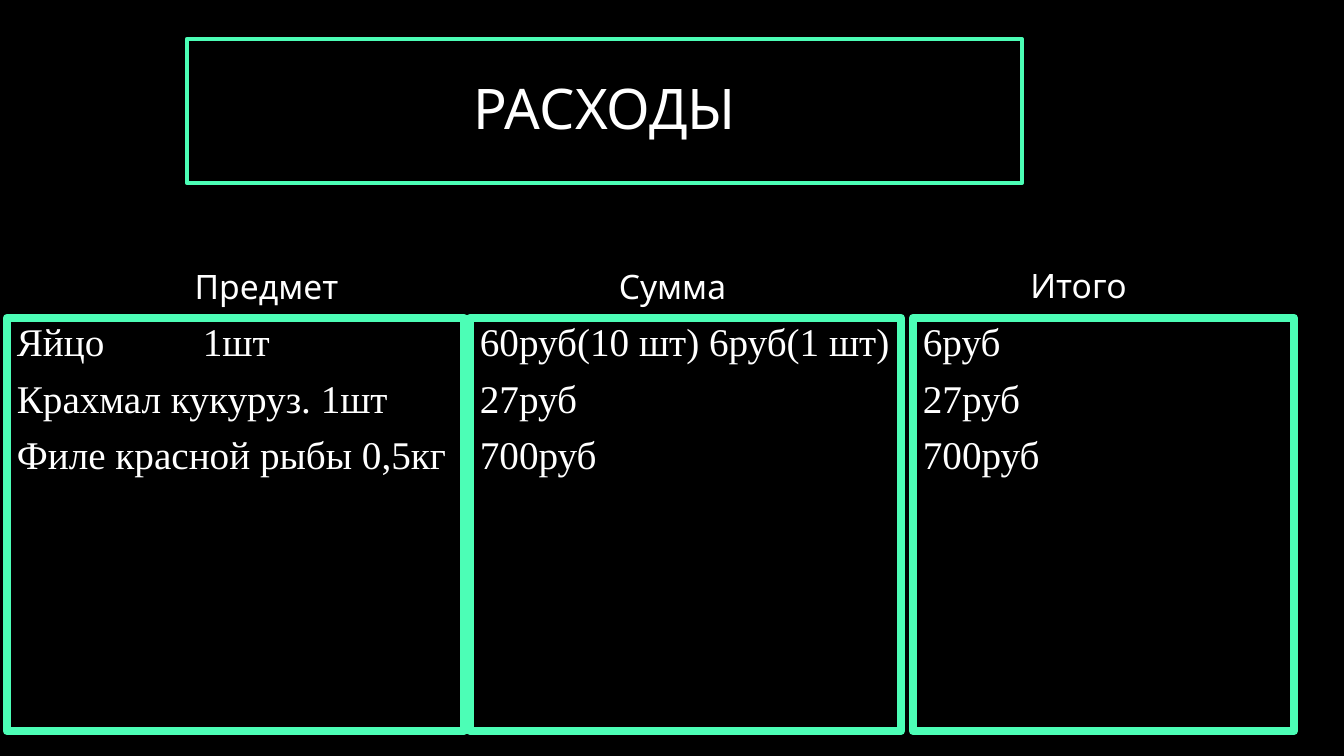
from lxml.etree import SubElement
from pptx import Presentation
from pptx.dml.color import RGBColor
from pptx.enum.shapes import MSO_SHAPE
from pptx.enum.text import MSO_ANCHOR, PP_ALIGN
from pptx.oxml.ns import qn
from pptx.util import Emu, Pt

BLACK, WHITE, MINT = "000000", "FFFFFF", "4CFEB6"
HEADING_FONT, LIST_FONT = "Quicksand", "Times New Roman"
QUANTITY_TAB = 186
LIST_TOP, LIST_HEIGHT = 318, 413
HEADING_WIDTH, HEADING_HEIGHT = 381, 69

# heading, heading left and top, list left and width, entries
COLUMNS = [
    ("Предмет", 76, 243, 7, 457,
     ["Яйцо\t1шт", "Крахмал кукуруз. 1шт", "Филе красной рыбы 0,5кг"]),
    ("Сумма", 482, 243, 470, 431,
     ["60руб(10 шт) 6руб(1 шт)", "27руб", "700руб"]),
    ("Итого", 888, 242, 913, 381,
     ["6руб", "27руб", "700руб"]),
]


def px(length):
    return Emu(round(length * 914400 / 100.8))


def color(value):
    return RGBColor.from_string(value)


def add_frame(page, box, line_width):
    """Add an unfilled mint rectangle."""
    frame = page.shapes.add_shape(MSO_SHAPE.RECTANGLE, *map(px, box))
    frame.shadow.inherit = False
    frame.fill.background()
    frame.line.color.rgb = color(MINT)
    frame.line.width = Pt(line_width)
    return frame


def write_lines(shape, lines, font, size, align, anchor):
    text = shape.text_frame
    text.word_wrap = True
    text.vertical_anchor = anchor
    for index, line in enumerate(lines):
        para = text.add_paragraph() if index else text.paragraphs[0]
        para.alignment = align
        para.line_spacing = 0.9
        if index:
            para.space_before = Pt(10)
        if "\t" in line:
            tabs = SubElement(para._p.get_or_add_pPr(), qn("a:tabLst"))
            SubElement(tabs, qn("a:tab"), pos=str(px(QUANTITY_TAB)), algn="l")
        span = para.add_run()
        span.text = line
        span.font.name = font
        span.font.size = Pt(size)
        span.font.color.rgb = color(WHITE)


def add_title(page, box, title):
    frame = add_frame(page, box, 3)
    write_lines(frame, [title], HEADING_FONT, 40, PP_ALIGN.CENTER, MSO_ANCHOR.MIDDLE)


def add_heading(page, box, heading):
    label = page.shapes.add_textbox(*map(px, box))
    write_lines(label, [heading], HEADING_FONT, 24, PP_ALIGN.CENTER, MSO_ANCHOR.BOTTOM)


def add_list(page, box, entries):
    frame = add_frame(page, box, 6)
    write_lines(frame, entries, LIST_FONT, 28, PP_ALIGN.LEFT, MSO_ANCHOR.TOP)


def add_expenses_slide(deck):
    page = deck.slides.add_slide(deck.slide_layouts[6])
    page.background.fill.solid()
    page.background.fill.fore_color.rgb = color(BLACK)
    add_title(page, (187, 39, 835, 144), "РАСХОДЫ")
    for heading, left, top, list_left, list_width, entries in COLUMNS:
        add_heading(page, (left, top, HEADING_WIDTH, HEADING_HEIGHT), heading)
        add_list(page, (list_left, LIST_TOP, list_width, LIST_HEIGHT), entries)


def main():
    deck = Presentation()
    deck.slide_width, deck.slide_height = px(1344), px(756)
    add_expenses_slide(deck)
    deck.save("out.pptx")


if __name__ == "__main__":
    main()
